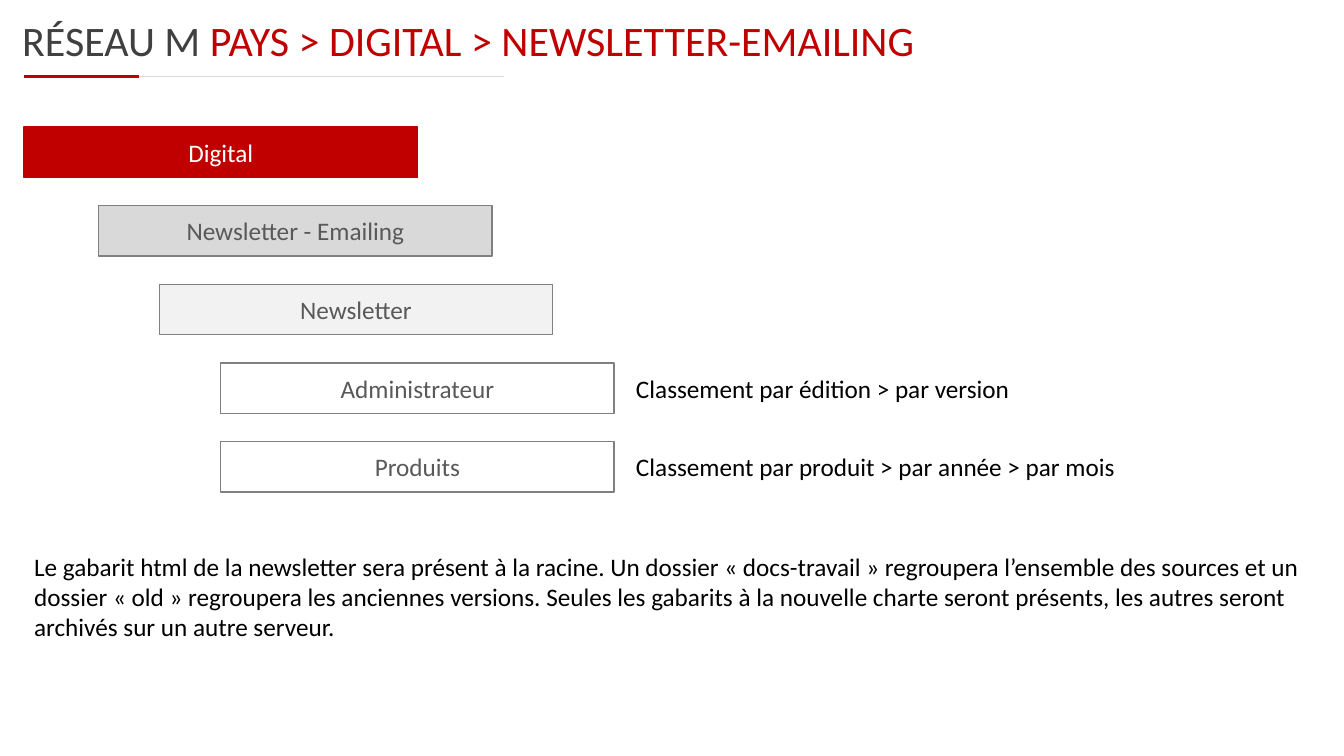
"""Build the slide showing the folder tree for newsletters and emailing."""
import pptx
import pptx.util
import pptx.dml.color
import pptx.enum.shapes
import pptx.enum.text
import lxml.etree

Inches, Pt = pptx.util.Inches, pptx.util.Pt
RGBColor = pptx.dml.color.RGBColor
PP_ALIGN, MSO_ANCHOR = pptx.enum.text.PP_ALIGN, pptx.enum.text.MSO_ANCHOR
MSO_AUTO_SIZE = pptx.enum.text.MSO_AUTO_SIZE

RED = RGBColor(0xC0, 0x00, 0x00)
WHITE = RGBColor(0xFF, 0xFF, 0xFF)
BLACK = RGBColor(0x00, 0x00, 0x00)
CHARCOAL = RGBColor(0x40, 0x40, 0x40)
SLATE = RGBColor(0x59, 0x59, 0x59)
GREY = RGBColor(0x80, 0x80, 0x80)
SILVER = RGBColor(0xD9, 0xD9, 0xD9)
PALE = RGBColor(0xF2, 0xF2, 0xF2)

HEADING = [("RÉSEAU M ", CHARCOAL), ("PAYS > DIGITAL > NEWSLETTER-EMAILING", RED)]
RULES = [(1.38, 5, SILVER, 0.25), (0.24, 1.38, RED, 2.5)]
FOLDERS = [
    ("Digital", 0, ""),
    ("Newsletter - Emailing", 1, ""),
    ("Newsletter", 2, ""),
    ("Administrateur", 3, "Classement par édition > par version"),
    ("Produits", 3, "Classement par produit > par année > par mois"),
]
LEVELS = [
    (0.24, RED, RED, WHITE),
    (0.98, SILVER, GREY, SLATE),
    (1.58, PALE, GREY, SLATE),
    (2.19, WHITE, GREY, SLATE),
]
REMARK = (
    "Le gabarit html de la newsletter sera présent à la racine. "
    "Un dossier « docs-travail » regroupera l’ensemble des sources et un "
    "dossier « old » regroupera les anciennes versions. "
    "Seules les gabarits à la nouvelle charte seront présents, "
    "les autres seront archivés sur un autre serveur."
)

RULE_TOP = 0.76
FOLDER_TOP, FOLDER_STEP = 1.26, 0.78
FOLDER_WIDTH, FOLDER_HEIGHT = 3.9, 0.5
NOTE_LEFT, NOTE_WIDTH, NOTE_HEIGHT = 6.21, 6.73, 0.4


def apply(target, settings):
    """Set every attribute listed in settings on target."""
    for attribute, value in settings.items():
        setattr(target, attribute, value)


def write(paragraph, text, color, size=18):
    """Add a formatted run to paragraph."""
    run = paragraph.add_run()
    run.text = text
    apply(run.font, {"name": "Calibri", "size": Pt(size)})
    run.font.color.rgb = color


def add_rule(slide, start, end, color, weight):
    """Draw one part of the line under the heading."""
    rule = slide.shapes.add_connector(
        pptx.enum.shapes.MSO_CONNECTOR.STRAIGHT,
        Inches(start), Inches(RULE_TOP), Inches(end), Inches(RULE_TOP))
    rule.line.color.rgb = color
    rule.line.width = Pt(weight)
    lxml.etree.SubElement(rule.element.spPr, pptx.oxml.ns.qn("a:effectLst"))


def add_note(slide, text, left, top, width, height):
    """Add a wrapped black text box."""
    note = slide.shapes.add_textbox(*map(Inches, (left, top, width, height)))
    apply(note.text_frame, {"word_wrap": True,
                            "auto_size": MSO_AUTO_SIZE.SHAPE_TO_FIT_TEXT})
    write(note.text_frame.paragraphs[0], text, BLACK)


def add_folder(slide, label, level, top):
    """Add the box of one folder, indented by its level."""
    left, fill, outline, ink = LEVELS[level]
    folder = slide.shapes.add_shape(
        pptx.enum.shapes.MSO_SHAPE.RECTANGLE,
        *map(Inches, (left, top, FOLDER_WIDTH, FOLDER_HEIGHT)))
    folder.shadow.inherit = False
    folder.fill.solid()
    folder.fill.fore_color.rgb = fill
    folder.line.color.rgb = outline
    folder.line.width = Pt(1)
    folder.text_frame.vertical_anchor = MSO_ANCHOR.MIDDLE
    paragraph = folder.text_frame.paragraphs[0]
    paragraph.alignment = PP_ALIGN.CENTER
    write(paragraph, label, ink)


def main():
    """Compose the slide and save it."""
    deck = pptx.Presentation()
    apply(deck, {"slide_width": Inches(13.33), "slide_height": Inches(7.5)})
    slide = deck.slides.add_slide(deck.slide_layouts.get_by_name("Title Only"))

    for rule in RULES:
        add_rule(slide, *rule)

    heading = slide.shapes.title
    apply(heading, {"left": Inches(0.12), "top": Inches(0.09),
                    "width": Inches(13.21), "height": Inches(1.49)})
    apply(heading.text_frame, {"word_wrap": True,
                               "auto_size": MSO_AUTO_SIZE.NONE,
                               "vertical_anchor": MSO_ANCHOR.TOP})
    paragraph = heading.text_frame.paragraphs[0]
    paragraph.alignment = PP_ALIGN.LEFT
    for text, color in HEADING:
        write(paragraph, text, color, 30)

    for row, (label, level, sorting) in enumerate(FOLDERS):
        top = FOLDER_TOP + row * FOLDER_STEP
        add_folder(slide, label, level, top)
        if sorting:
            add_note(slide, sorting, NOTE_LEFT,
                     top + (FOLDER_HEIGHT - NOTE_HEIGHT) / 2,
                     NOTE_WIDTH, NOTE_HEIGHT)

    add_note(slide, REMARK, 0.24, 5.42, 12.87, 1.01)
    deck.save("out.pptx")


if __name__ == "__main__":
    main()
